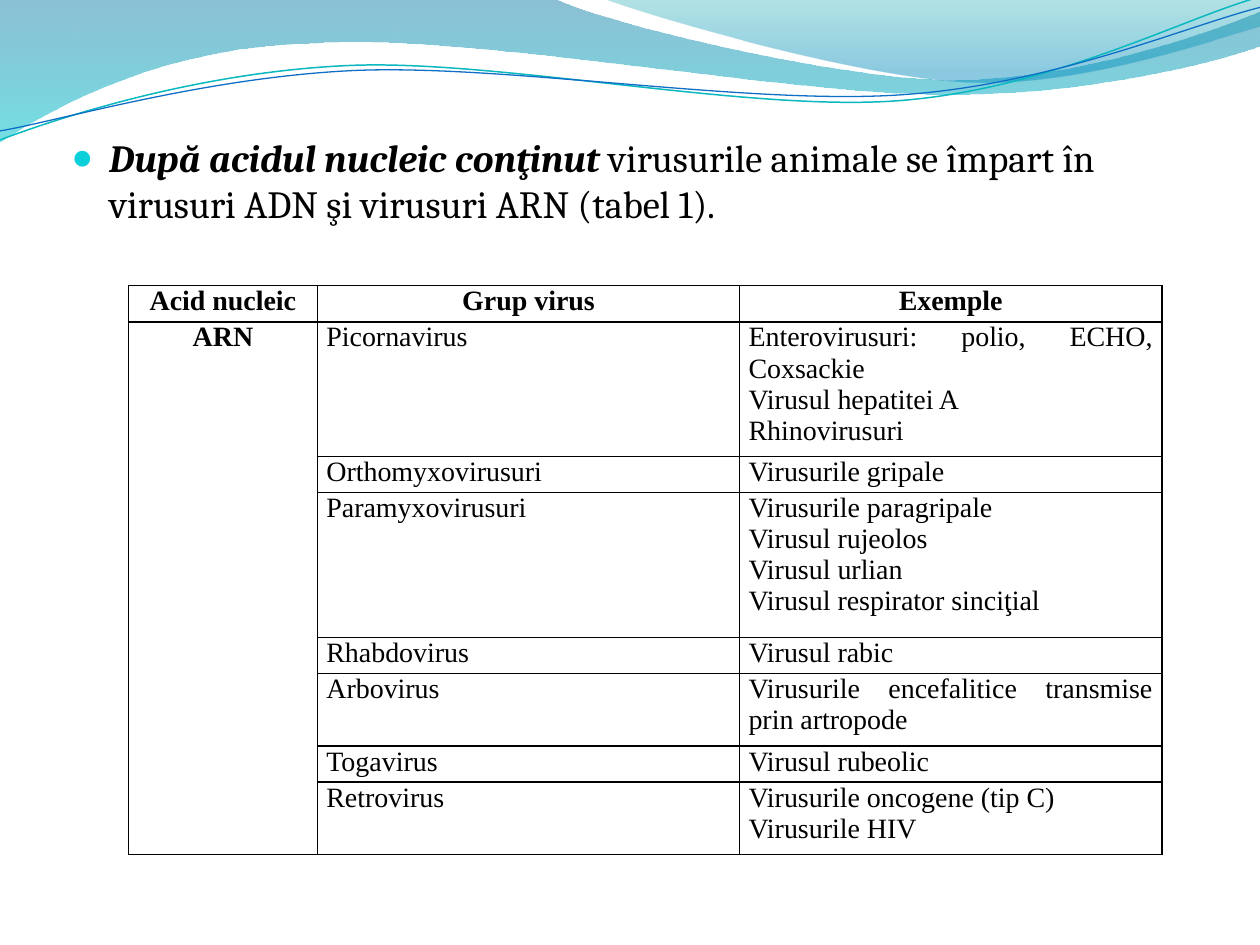
import math
import pptx
import pptx.dml.color
import pptx.enum.text
import pptx.oxml
import pptx.oxml.ns
import pptx.util
from dataclasses import dataclass

Cm, Pt = pptx.util.Cm, pptx.util.Pt
Align = pptx.enum.text.PP_ALIGN
NS = pptx.oxml.ns.nsdecls("a")


@dataclass(frozen=True)
class Theme:
    text: str = "000000"
    bullet: str = "0BD0D9"
    border: str = "000000"
    body_font: str = "Cambria"
    table_font: str = "Times New Roman"
    body_size: float = 22
    table_size: float = 16


THEME = Theme()

# Content
INTRO = [
    ("După acidul nucleic conţinut ", True),
    ("virusurile animale se împart în virusuri ADN şi virusuri ARN (tabel 1).", False),
]
HEADER = ["Acid nucleic", "Grup virus", "Exemple"]
ACID = "ARN"
GROUPS = [
    ("Picornavirus", ["Enterovirusuri: polio, ECHO, Coxsackie",
                      "Virusul hepatitei A", "Rhinovirusuri"]),
    ("Orthomyxovirusuri", ["Virusurile gripale"]),
    ("Paramyxovirusuri", ["Virusurile paragripale", "Virusul rujeolos",
                          "Virusul urlian", "Virusul respirator sinciţial"]),
    ("Rhabdovirus", ["Virusul rabic"]),
    ("Arbovirus", ["Virusurile encefalitice transmise prin artropode"]),
    ("Togavirus", ["Virusul rubeolic"]),
    ("Retrovirus", ["Virusurile oncogene (tip C)", "Virusurile HIV"]),
]
COL_WIDTHS = [3.81, 8.51, 8.51]
LINE_HEIGHT = 0.73
ROW_LINES = [1, 3, 1, 4, 1, 2, 1, 2]

# Waves in cm: a start point, then steps of 1 point (line) or 3 points (curve)
BANDS = [
    ((0, 0),
     [[(11.18, -0.03)],
      [(12.09, 0.43), (16.87, 1.6), (19.25, 1.6)],
      [(21.69, 1.6), (24.33, 0.66), (25.4, 0.23)],
      [(25.43, 0.91)],
      [(24.97, 1.12), (22.1, 1.93), (18.95, 1.9)],
      [(15.8, 1.9), (9.7, 0.71), (6.53, 0.86)],
      [(3.28, 0.91), (1.17, 2.11), (-0.03, 2.87)],
      [(0, 0)]],
     [(0, "0074A1", 45), (1, "00C6CF", 55)]),
    ((12.17, -0.03),
     [[(12.93, 0.28), (17.32, 1.57), (19.53, 1.65)],
      [(21.74, 1.75), (24.41, 0.81), (25.4, 0.53)],
      [(25.4, 0)],
      [(12.17, -0.03)]],
     [(0, "00A1A9", 30), (0.8, "008BBF", 45)]),
]
STRAND_TILT = -2.7
STRANDS = [
    ((0, 2.82),
     [[(1.22, 2.36), (4.01, 1.45), (7.04, 1.32)],
      [(10.03, 1.19), (15.06, 2.26), (18.11, 2.03)],
      [(21.16, 1.8), (23.83, 0.38), (25.35, -0.05)]],
     (12.67, 1.46), "0AB8BF", 0.85),
    ((0, 2.64),
     [[(1.19, 2.44), (4.17, 1.55), (7.19, 1.42)],
      [(10.24, 1.3), (15.16, 2.13), (18.21, 1.91)],
      [(21.23, 1.7), (23.9, 0.53), (25.4, 0.15)]],
     (12.69, 1.5), "0F6FC6", 0.75),
]


def rgb(value):
    return pptx.dml.color.RGBColor.from_string(value)


def turn(point, pivot, degrees):
    a = math.radians(degrees)
    dx, dy = point[0] - pivot[0], point[1] - pivot[1]
    return (pivot[0] + dx * math.cos(a) - dy * math.sin(a),
            pivot[1] + dx * math.sin(a) + dy * math.cos(a))


def add_wave(s, start, steps, close, pivot=(0, 0), tilt=0):
    """Draw the wave level, bend its curves, then tilt it."""
    points = [start] + [point for step in steps for point in step]
    points = [tuple(Cm(v) for v in turn(point, pivot, -tilt)) for point in points]
    builder = s.shapes.build_freeform(*points[0])
    builder.add_line_segments(points[1:], close=close)
    sp = builder.convert_to_shape()
    segments = iter(sp._element.findall(".//" + pptx.oxml.ns.qn("a:lnTo")))
    for step in steps:
        parts = [next(segments) for _ in step]
        if len(parts) == 3:
            curve = pptx.oxml.parse_xml(f"<a:cubicBezTo {NS}/>")
            parts[0].addprevious(curve)
            for part in parts:
                curve.append(part[0])
                part.getparent().remove(part)
    sp.rotation = tilt
    sp.shadow.inherit = False
    return sp


def fill_gradient(sp, stops):
    sp.fill.gradient()
    sp.fill.gradient_angle = 270
    for stop, (position, color, opacity) in zip(sp.fill.gradient_stops, stops):
        stop.position = position
        stop.color.rgb = rgb(color)
        # The stop element holds its colour as the only child
        stop._gs[0].append(pptx.oxml.parse_xml(f'<a:alpha {NS} val="{opacity * 1000}"/>'))


def set_font(p, name, size, bold=None):
    p.font.name, p.font.size, p.font.bold = name, Pt(size), bold
    p.font.color.rgb = rgb(THEME.text)


def add_intro(s):
    sp = s.shapes.add_textbox(Cm(1.19), Cm(2.58), Cm(22.86), Cm(1.96))
    tf = sp.text_frame
    tf.word_wrap = True
    p = tf.paragraphs[0]
    set_font(p, THEME.body_font, THEME.body_size)
    p.space_before = Pt(0.2 * THEME.body_size)
    for text, strong in INTRO:
        r = p.add_run()
        r.text = text
        r.font.bold = r.font.italic = strong
    pPr = p._p.get_or_add_pPr()
    pPr.set("marL", str(Cm(0.76)))
    pPr.set("indent", str(-Cm(0.76)))
    bullet = (f'<a:buClr {NS}><a:srgbClr val="{THEME.bullet}"/></a:buClr>',
              f'<a:buSzPct {NS} val="95000"/>',
              f'<a:buFont {NS} typeface="{THEME.table_font}"/>',
              f'<a:buChar {NS} char="●"/>')
    font = pPr.find(pptx.oxml.ns.qn("a:defRPr"))
    for xml in bullet:
        font.addprevious(pptx.oxml.parse_xml(xml))


def style_cell(cell):
    cell.margin_left = cell.margin_right = Cm(0.18)
    cell.margin_top = cell.margin_bottom = 0
    tcPr = cell._tc.get_or_add_tcPr()
    for side in ("lnL", "lnR", "lnT", "lnB"):
        tcPr.append(pptx.oxml.parse_xml(
            f'<a:{side} {NS} w="{Pt(1)}"><a:solidFill><a:srgbClr val="{THEME.border}"/>'
            f'</a:solidFill></a:{side}>'))
    cell.fill.background()


def write_cell(cell, lines, bold=False):
    cell.text = "\n".join(lines)
    for p in cell.text_frame.paragraphs:
        p.alignment = Align.CENTER if bold else Align.JUSTIFY
        set_font(p, THEME.table_font, THEME.table_size, bold)


def add_virus_table(s):
    frame = s.shapes.add_table(len(ROW_LINES), len(COL_WIDTHS), Cm(2.59), Cm(5.76),
                               Cm(sum(COL_WIDTHS)), Cm(11.43))
    table = frame.table
    table.first_row = table.horz_banding = False
    for column, width in zip(table.columns, COL_WIDTHS):
        column.width = Cm(width)
    for row, lines in zip(table.rows, ROW_LINES):
        row.height = Cm(LINE_HEIGHT * lines)
    frame.height = Cm(11.43)
    for cell in table.iter_cells():
        style_cell(cell)
    for col, title in enumerate(HEADER):
        write_cell(table.cell(0, col), [title], bold=True)
    for row, (group, examples) in enumerate(GROUPS, 1):
        write_cell(table.cell(row, 1), [group])
        write_cell(table.cell(row, 2), examples)
    # One nucleic acid spans every group, one line below the top edge
    acid = table.cell(1, 0)
    acid.merge(table.cell(len(GROUPS), 0))
    write_cell(acid, [ACID], bold=True)
    acid.text_frame.paragraphs[0].space_before = Pt(18)


def main():
    prs = pptx.Presentation()
    prs.slide_width, prs.slide_height = Cm(25.4), Cm(19.05)
    s = prs.slides.add_slide(prs.slide_layouts[6])

    # Wave decoration
    for start, steps, stops in BANDS:
        sp = add_wave(s, start, steps, close=True)
        fill_gradient(sp, stops)
        sp.line.fill.background()
    for start, steps, pivot, color, width in STRANDS:
        sp = add_wave(s, start, steps, False, pivot, STRAND_TILT)
        sp.fill.background()
        sp.line.color.rgb, sp.line.width = rgb(color), Pt(width)

    # Text and table
    add_intro(s)
    add_virus_table(s)
    prs.save("out.pptx")


if __name__ == "__main__":
    main()
